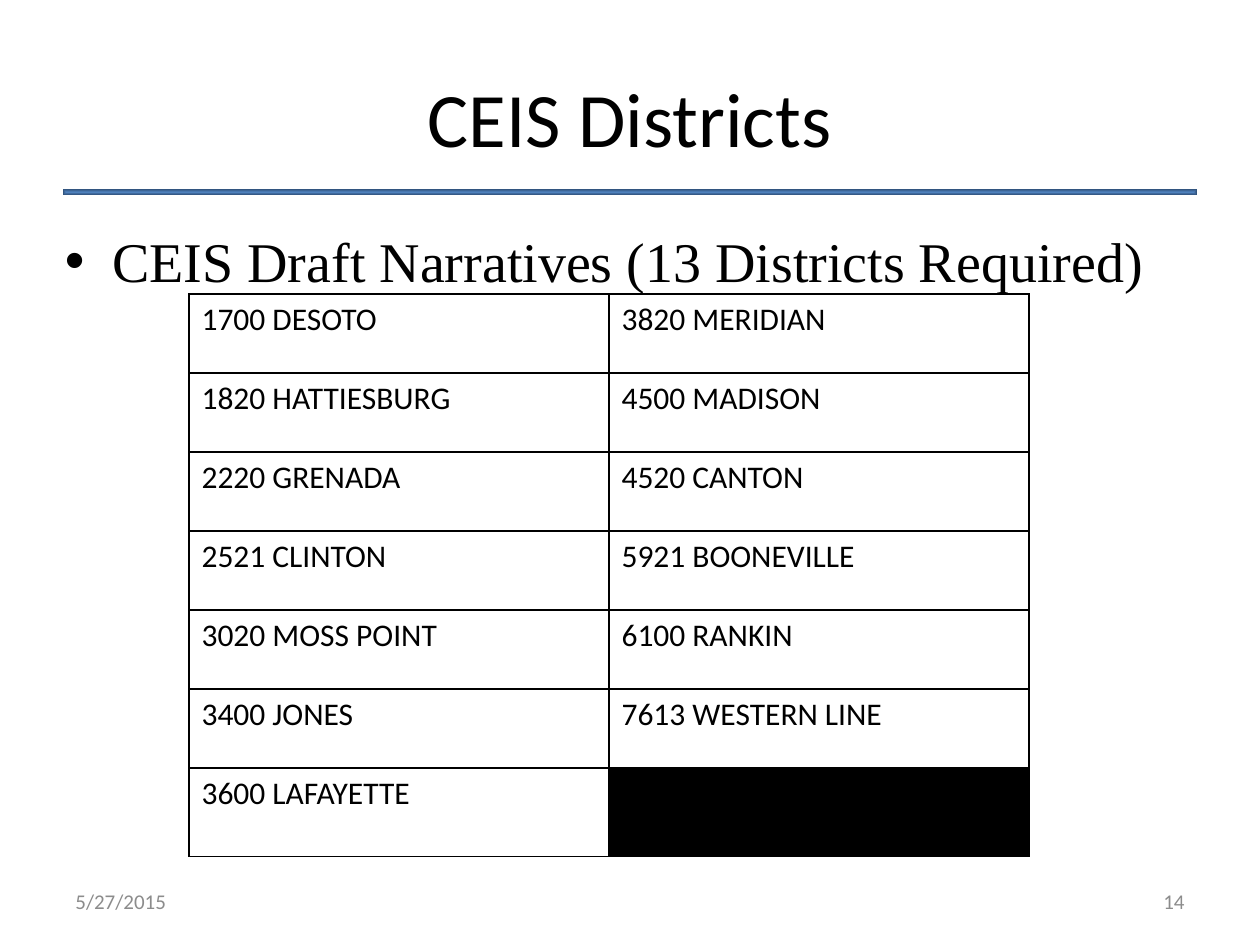
from lxml.etree import SubElement
from pptx import Presentation
from pptx.dml.color import RGBColor
from pptx.enum.shapes import MSO_SHAPE
from pptx.enum.text import MSO_ANCHOR, PP_ALIGN
from pptx.oxml import parse_xml
from pptx.oxml.ns import nsdecls, qn
from pptx.util import Pt

BLACK, WHITE, GREY = "000000", "FFFFFF", "8C8C8C"
DISTRICTS = [
    ("1700 DESOTO", "3820 MERIDIAN"),
    ("1820 HATTIESBURG", "4500 MADISON"),
    ("2220 GRENADA", "4520 CANTON"),
    ("2521 CLINTON", "5921 BOONEVILLE"),
    ("3020 MOSS POINT", "6100 RANKIN"),
    ("3400 JONES", "7613 WESTERN LINE"),
    ("3600 LAFAYETTE", ""),
]


def color(value):
    return RGBColor.from_string(value)


def set_font(font, size, value=BLACK, name="Calibri"):
    for key, setting in {"size": Pt(size), "name": name}.items():
        setattr(font, key, setting)
    font.color.rgb = color(value)


def add_text(page, box, text, size, value=BLACK, name="Calibri",
             align=PP_ALIGN.LEFT, anchor=MSO_ANCHOR.MIDDLE):
    frame = page.shapes.add_textbox(*map(Pt, box)).text_frame
    frame.word_wrap = True
    frame.vertical_anchor = anchor
    para = frame.paragraphs[0]
    para.alignment = align
    span = para.add_run()
    span.text = text
    set_font(span.font, size, value, name)
    return para


def add_rule(page, box):
    """Draw the bar under the title, shaded from its centre to its edges."""
    bar = page.shapes.add_shape(MSO_SHAPE.RECTANGLE, *map(Pt, box))
    bar.shadow.inherit = False
    bar.line.fill.background()
    bar.fill.gradient()
    for stop, position, value in zip(bar.fill.gradient_stops, (0, 1), ("4F81BD", "2C4C74")):
        stop.position = position
        stop.color.rgb = color(value)
    gradient = bar._element.spPr.find(qn("a:gradFill"))
    gradient.replace(gradient.find(qn("a:lin")), parse_xml(
        f'<a:path {nsdecls("a")} path="shape">'
        '<a:fillToRect l="50000" t="50000" r="50000" b="50000"/></a:path>'))


def add_bullet(page, box, text):
    para = add_text(page, box, text, 32, name="Times New Roman", anchor=MSO_ANCHOR.TOP)
    properties = para._p.get_or_add_pPr()
    properties.set("marL", str(Pt(27)))
    properties.set("indent", str(Pt(-27)))
    SubElement(properties, qn("a:buFont"), typeface="Arial")
    SubElement(properties, qn("a:buChar"), char="•")


def set_borders(cell):
    properties = cell._tc.get_or_add_tcPr()
    for position, side in enumerate(("lnL", "lnR", "lnT", "lnB")):
        properties.insert(position, parse_xml(
            f'<a:{side} {nsdecls("a")} w="{Pt(1)}"><a:solidFill>'
            f'<a:srgbClr val="{BLACK}"/></a:solidFill></a:{side}>'))


def add_districts(page, box, row_height):
    """Fill the box with the table; the last row takes the height left over."""
    left, top, width, height = box
    count = len(DISTRICTS)
    table = page.shapes.add_table(count, 2, *map(Pt, box)).table
    table.first_row = table.horz_banding = False
    for column in table.columns:
        column.width = Pt(width / 2)
    for row, names in zip(table.rows, DISTRICTS):
        row.height = Pt(row_height)
        for cell, name in zip(row.cells, names):
            cell.fill.solid()
            cell.fill.fore_color.rgb = color(WHITE if name else BLACK)
            set_borders(cell)
            para = cell.text_frame.paragraphs[0]
            para.text = name
            set_font(para.font, 18)
            for span in para.runs:
                set_font(span.font, 18)
    table.rows[count - 1].height = Pt(height - row_height * (count - 1))


def add_footer(page, box, date, number):
    left, top, width, height = box
    part = 168
    add_text(page, (left, top, part, height), date, 12, GREY)
    add_text(page, (left + width - part, top, part, height), number, 12, GREY,
             align=PP_ALIGN.RIGHT)


def main():
    deck = Presentation()
    deck.slide_width, deck.slide_height = Pt(720), Pt(540)
    page = deck.slides.add_slide(deck.slide_layouts[6])
    add_rule(page, (36, 108, 648, 3.6))
    add_text(page, (36, 21.6, 648, 90), "CEIS Districts", 44, align=PP_ALIGN.CENTER)
    add_bullet(page, (30, 126, 654, 360), "CEIS Draft Narratives (13 Districts Required)")
    add_footer(page, (36, 500.5, 648, 28.75), "5/27/2015", "14")
    add_districts(page, (108, 168, 480, 321.5), 45.14)
    deck.save("out.pptx")


if __name__ == "__main__":
    main()
